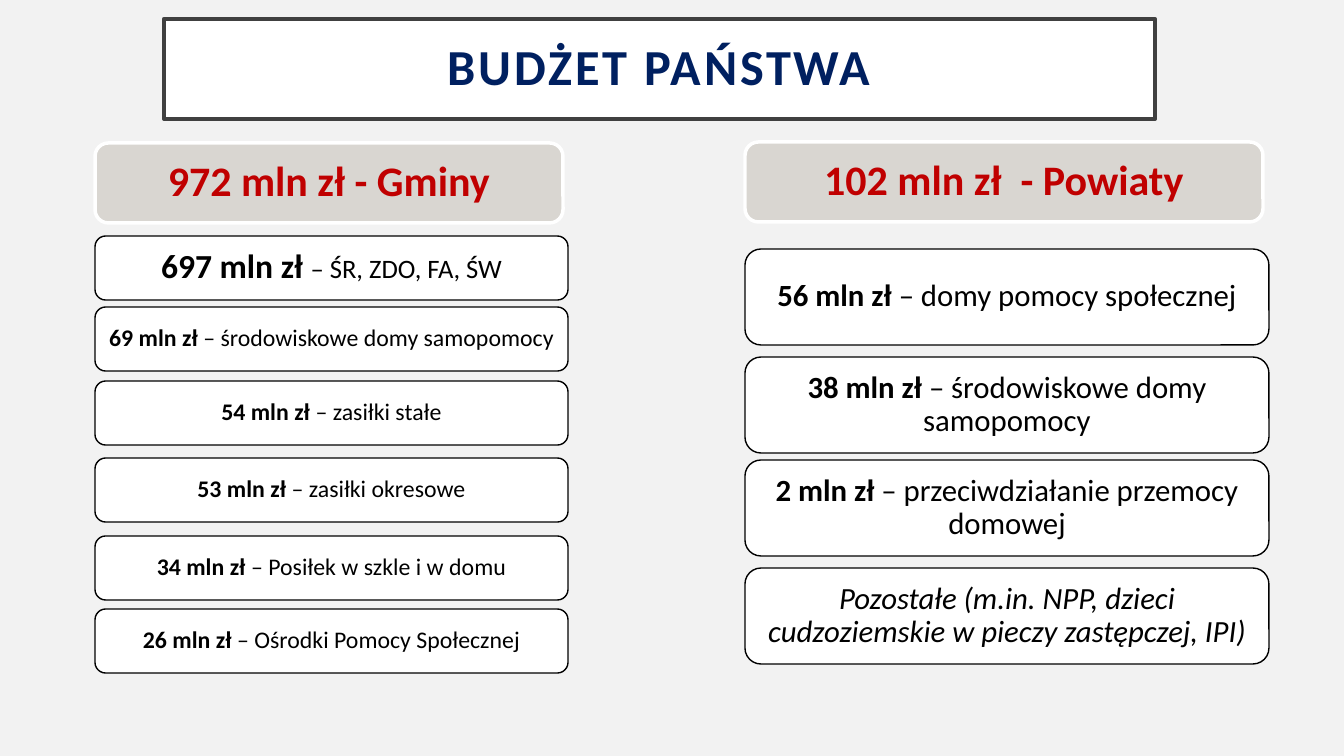
import pptx
import pptx.util
from pptx.dml.color import RGBColor
from pptx.enum.shapes import MSO_SHAPE
from pptx.enum.text import MSO_ANCHOR, MSO_AUTO_SIZE, PP_ALIGN

COLORS = {"bg": "F2F2F2", "white": "FFFFFF", "frame": "404040", "navy": "002060",
          "red": "C00000", "beige": "D9D6D1", "black": "000000"}
SIZE = (1344, 756)
EMU_PER_PX = pptx.util.Inches(1) / 100.8

TITLE = "BUDŻET PAŃSTWA"
COLUMNS = [
    {"left": 95, "width": 473, "height": 64, "inset": 7, "size": 17,
     "header": ("972 mln zł - Gminy", 143, 468),
     "rows": [
         (236, "697 mln zł ", "– ŚR, ZDO, FA, ŚW"),
         (307, "69 mln zł ", "– środowiskowe domy samopomocy"),
         (381, "54 mln zł ", "– zasiłki stałe"),
         (458, "53 mln zł ", "– zasiłki okresowe"),
         (536, "34 mln zł ", "– Posiłek w szkle i w domu"),
         (609, "26 mln zł ", "– Ośrodki Pomocy Społecznej"),
     ]},
    {"left": 745, "width": 524, "height": 96, "inset": 9, "size": 22,
     "header": ("102 mln zł  - Powiaty", 142, 518),
     "rows": [
         (249, "56 mln zł ", "– domy pomocy społecznej"),
         (357, "38 mln zł ", "– środowiskowe domy samopomocy"),
         (460, "2 mln zł ", "– przeciwdziałanie przemocy domowej"),
         (568, "", "Pozostałe (m.in. NPP, dzieci cudzoziemskie w pieczy zastępczej, IPI)"),
     ]},
]
LEAD_SIZES = {"697 mln zł ": (24, 19)}


def px(n):
    return round(n * EMU_PER_PX)


def rgb(name):
    return RGBColor.from_string(COLORS[name])


def style(sp, box, fill, line, line_width, insets, runs):
    for name, n in zip(("left", "top", "width", "height"), box):
        setattr(sp, name, px(n))
    sp.fill.solid()
    sp.fill.fore_color.rgb = rgb(fill)
    sp.line.color.rgb = rgb(line)
    sp.line.width = pptx.util.Pt(line_width)
    tf = sp.text_frame
    frame = {"word_wrap": True, "auto_size": MSO_AUTO_SIZE.NONE,
             "vertical_anchor": MSO_ANCHOR.MIDDLE,
             "margin_left": px(insets[0]), "margin_right": px(insets[0]),
             "margin_top": px(insets[1]), "margin_bottom": px(insets[1])}
    for name, value in frame.items():
        setattr(tf, name, value)
    p = tf.paragraphs[0]
    p.alignment = PP_ALIGN.CENTER
    p.line_spacing = 0.9
    for text, color, size, bold, italic in runs:
        r = p.add_run()
        r.text = text
        font = {"name": "Calibri", "size": pptx.util.Pt(size), "bold": bold, "italic": italic}
        for name, value in font.items():
            setattr(r.font, name, value)
        r.font.color.rgb = rgb(color)


def add_box(s, *args):
    sp = s.shapes.add_shape(MSO_SHAPE.ROUNDED_RECTANGLE, 0, 0, 0, 0)
    sp.shadow.inherit = False
    style(sp, *args)


def add_column(s, col):
    text, top, width = col["header"]
    add_box(s, (col["left"], top, width, 80), "beige", "white", 2.5, (12, 12),
            [(text, "red", 30, True, False)])
    for top, amount, label in col["rows"]:
        lead, size = LEAD_SIZES.get(amount, (col["size"], col["size"]))
        runs = [(label, "black", size, False, not amount)]
        if amount:
            runs.insert(0, (amount, "black", lead, True, False))
        add_box(s, (col["left"], top, col["width"], col["height"]), "white", "black", 1,
                (col["inset"], col["inset"]), runs)


def main():
    prs = pptx.Presentation()
    prs.slide_width, prs.slide_height = map(px, SIZE)
    s = prs.slides.add_slide(prs.slide_layouts[5])
    s.background.fill.solid()
    s.background.fill.fore_color.rgb = rgb("bg")
    title = s.shapes.title
    style(title, (164, 19, 991, 100), "white", "frame", 3, (30, 20),
          [(TITLE, "navy", 36, True, False)])
    title.text_frame.paragraphs[0].runs[0].font._element.set("spc", "200")
    for col in COLUMNS:
        add_column(s, col)
    prs.save("out.pptx")


if __name__ == "__main__":
    main()
